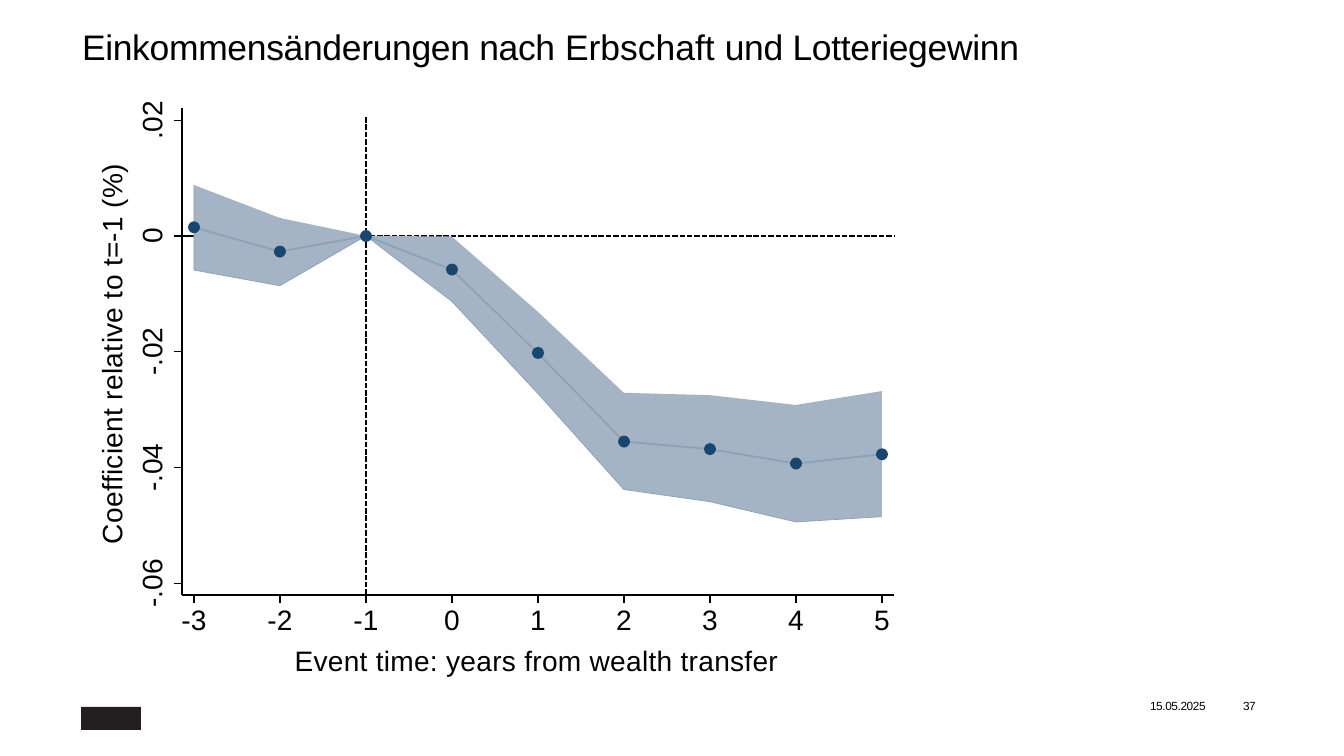
from dataclasses import dataclass

from lxml.etree import SubElement
from pptx import Presentation
from pptx.dml.color import RGBColor as RGB
from pptx.enum.dml import MSO_LINE as Dash
from pptx.enum.shapes import MSO_CONNECTOR as Conn, MSO_SHAPE as Form
from pptx.enum.text import MSO_ANCHOR as Anchor, PP_ALIGN as Align
from pptx.oxml.ns import qn
from pptx.util import Pt

UNIT = 914400 / 213


@dataclass(frozen=True)
class Theme:
    font: str = "Arial"
    ink: RGB = RGB(0, 0, 0)
    band: RGB = RGB(0xA4, 0xB4, 0xC5)
    trend: RGB = RGB(0x8C, 0xA3, 0xB7)
    dot: RGB = RGB(0x19, 0x46, 0x6E)
    mark: RGB = RGB(0x23, 0x1F, 0x20)
    title: float = 12
    label: float = 9.5
    small: float = 4
    thin: float = 0.25
    axis: float = 0.4
    rule: float = 0.61


@dataclass(frozen=True)
class Box:
    x: int
    y: int
    w: int
    h: int


THEME = Theme()
YEARS = range(-3, 6)
TICKS = {20: ".02", 0: "0", -20: "-.02", -40: "-.04", -60: "-.06"}
# Coefficients and their bounds, in thousandths
MEANS = [1.5, -2.7, 0, -5.8, -20.2, -35.5, -36.8, -39.3, -37.7]
HIGHS = [8.8, 3.1, 0, -0.1, -13.1, -27.1, -27.5, -29.2, -26.8]
LOWS = [-5.9, -8.6, 0, -11.3, -27.2, -43.8, -45.9, -49.4, -48.5]


def px(num):
    return round(num * UNIT)


def add_text(slide, box, runs, size, align=Align.CENTER, turn=False):
    """Write (text, letter spacing in 1/100 pt) runs, centred in height."""
    area = slide.shapes.add_textbox(px(box.x), px(box.y), px(box.w), px(box.h))
    frame = area.text_frame
    frame.margin_left = frame.margin_right = 0
    frame.margin_top = frame.margin_bottom = 0
    frame.word_wrap = True
    frame.vertical_anchor = Anchor.MIDDLE
    if turn:
        frame._txBody.bodyPr.set("vert", "vert270")
    para = frame.paragraphs[0]
    para.alignment = align
    for text, gap in runs:
        run = para.add_run()
        run.text = text
        run.font.name = THEME.font
        run.font.size = Pt(size)
        run.font.color.rgb = THEME.ink
        run._r.get_or_add_rPr().set("spc", str(gap))


def add_line(slide, start, end, width, dash=None):
    line = slide.shapes.add_connector(Conn.STRAIGHT, *map(px, (*start, *end)))
    line.line.color.rgb = THEME.ink
    line.line.width = Pt(width)
    if dash:
        line.line.dash_style = dash
    SubElement(line._element.spPr, qn("a:effectLst"))


def fill_shape(shape, color):
    shape.shadow.inherit = False
    shape.fill.solid()
    shape.fill.fore_color.rgb = color
    shape.line.fill.background()


def add_path(slide, points, close=False):
    spots = [(px(x), px(y)) for x, y in points]
    pen = slide.shapes.build_freeform(*spots[0])
    pen.add_line_segments(spots[1:], close=close)
    return pen.convert_to_shape()


def add_curve(slide, points, width):
    curve = add_path(slide, points)
    curve.shadow.inherit = False
    curve.fill.background()
    curve.line.color.rgb = THEME.trend
    curve.line.width = Pt(width)


def add_title(slide, box):
    runs = [("Einkommensänderungen nach ", -10), ("Erbschaft ", 0),
            ("und Lotteriegewinn", -10)]
    add_text(slide, box, runs, THEME.title, Align.LEFT)


def add_plot(slide, box):
    """Draw the event study; the box is the area between the axes."""
    left, right = box.x, box.x + box.w
    base = box.y + box.h
    zero = box.y + 128

    def across(year):
        return left + 12 + 86 * (year - YEARS[0])

    def down(value):
        return zero - 5.79 * value

    def trace(values):
        return [(across(year), down(val)) for year, val in zip(YEARS, values)]

    add_line(slide, (across(-1), box.y + 9), (across(-1), base),
             THEME.rule, Dash.SQUARE_DOT)
    add_line(slide, (left, zero), (left + 12, zero), THEME.rule)
    add_line(slide, (left + 18, zero), (right, zero),
             THEME.rule, Dash.SQUARE_DOT)

    high, low, mean = map(trace, (HIGHS, LOWS, MEANS))
    fill_shape(add_path(slide, high + low[::-1], close=True), THEME.band)
    add_curve(slide, high[:1] + low, THEME.thin)
    add_curve(slide, mean, THEME.rule)
    for x, y in mean:
        dot = slide.shapes.add_shape(Form.OVAL, px(x - 6), px(y - 6),
                                     px(12), px(12))
        fill_shape(dot, THEME.dot)

    add_line(slide, (left, box.y), (left, base), THEME.axis)
    add_line(slide, (left, base), (right, base), THEME.axis)
    for val, text in TICKS.items():
        y = down(val)
        add_line(slide, (left - 8, y), (left, y), THEME.axis)
        add_text(slide, Box(left - 50, y - 30, 38, 60), [(text, 0)],
                 THEME.label, turn=True)
    for year in YEARS:
        x = across(year)
        add_line(slide, (x, base), (x, base + 8), THEME.axis)
        add_text(slide, Box(x - 30, base + 4, 60, 40), [(str(year), 10)],
                 THEME.label)
    add_text(slide, Box(left - 90, zero - 82, 38, 400),
             [("Coefficient relative to t=-1 (%)", 10)],
             THEME.label, turn=True)
    add_text(slide, Box(left + 75, base + 45, 560, 40),
             [("Event time: years from wealth transfer", 10)], THEME.label)


def add_foot(slide, box):
    mark = slide.shapes.add_shape(Form.RECTANGLE, px(box.x), px(box.y + 7),
                                  px(60), px(23))
    fill_shape(mark, THEME.mark)
    right = box.x + box.w
    for x, text in ((right - 107, "15.05.2025"), (right - 14, "37")):
        add_text(slide, Box(x, box.y - 4, 70, 20), [(text, -10)],
                 THEME.small, Align.LEFT)


def main():
    deck = Presentation()
    deck.slide_width, deck.slide_height = px(1344), px(756)
    slide = deck.slides.add_slide(deck.slide_layouts[6])
    add_title(slide, Box(82, 22, 1000, 48))
    add_plot(slide, Box(182, 108, 712, 487))
    add_foot(slide, Box(81, 700, 1176, 30))
    deck.save("out.pptx")


if __name__ == "__main__":
    main()
